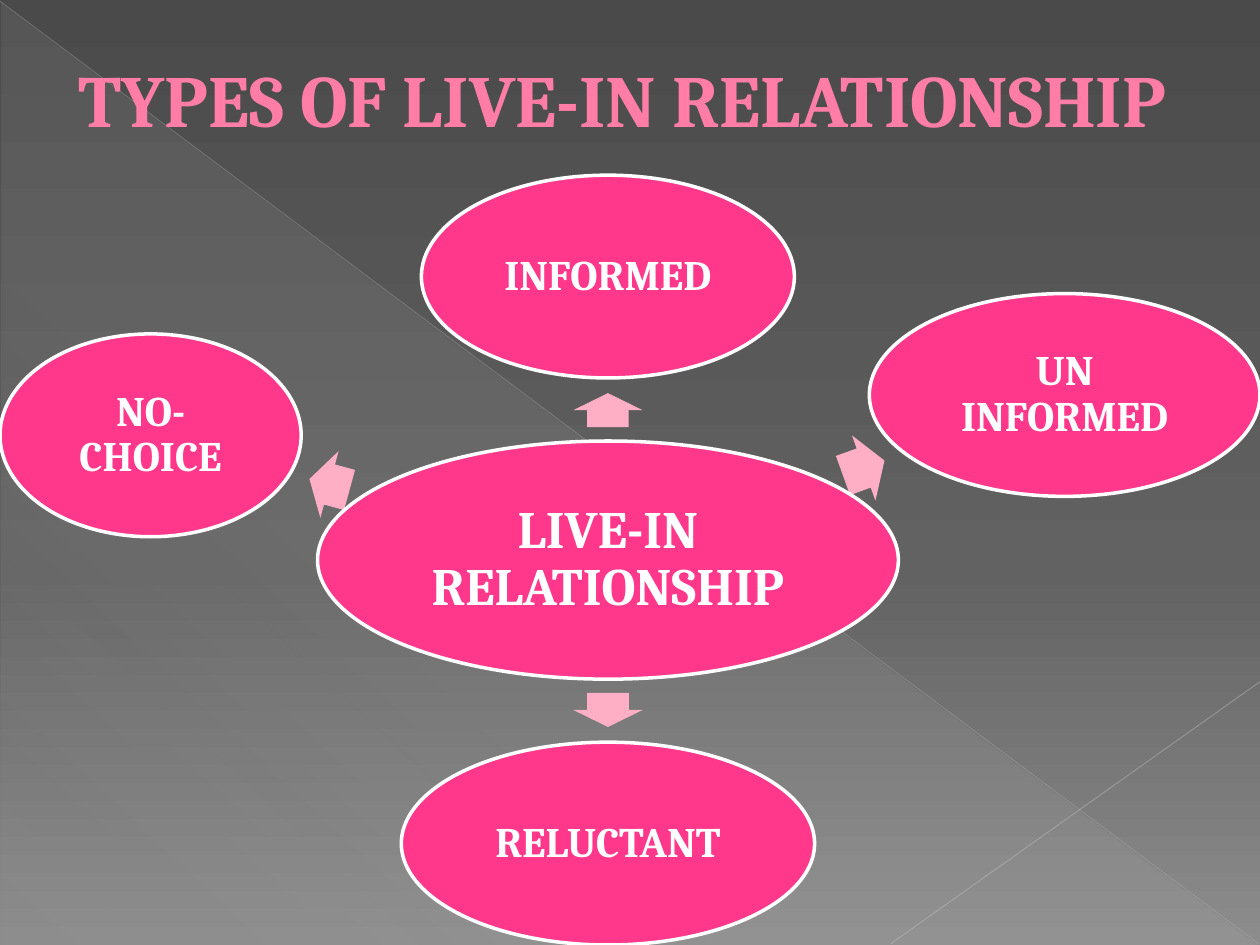
from lxml import etree
from pptx import Presentation
from pptx.dml.color import RGBColor
from pptx.enum.shapes import MSO_CONNECTOR as CONN, MSO_SHAPE as SHAPE
from pptx.enum.text import MSO_ANCHOR as ANCHOR, MSO_AUTO_SIZE as AUTO, PP_ALIGN as ALIGN
from pptx.oxml.ns import qn
from pptx.util import Inches, Pt

WHITE = RGBColor(0xFF, 0xFF, 0xFF)
PINK = RGBColor(0xFF, 0x38, 0x8C)
PALE_PINK = RGBColor(0xFF, 0xAF, 0xC5)
TITLE_PINK = RGBColor(0xFF, 0x7D, 0xA7)
OUTLINE = RGBColor(0xB1, 0x27, 0x61)
DARK = RGBColor(0x4A, 0x4A, 0x4A)
MID = RGBColor(0x62, 0x62, 0x62)
LIGHT = RGBColor(0x8C, 0x8C, 0x8C)
SHEEN = RGBColor(0xD2, 0xD2, 0xD2)
RULE_A = RGBColor(0xBF, 0xBF, 0xBF)
RULE_B = RGBColor(0xC6, 0xC6, 0xC6)
FONT = "Cambria"

prs = Presentation()
prs.slide_width, prs.slide_height = Inches(10), Inches(7.5)
COL, ROW = prs.slide_width / 100, prs.slide_height / 75
s = prs.slides.add_slide(prs.slide_layouts[5])


def set_gradient(fill, root, stops, angle):
    """Stops are (position %, colour, opacity %); the angle runs clockwise."""
    fill.gradient()
    grad = root.find(".//" + qn("a:gradFill"))
    for child in list(grad):
        grad.remove(child)
    gs_list = etree.SubElement(grad, qn("a:gsLst"))
    for pos, color, opacity in stops:
        gs = etree.SubElement(gs_list, qn("a:gs"), pos=str(pos * 1000))
        clr = etree.SubElement(gs, qn("a:srgbClr"), val=str(color))
        etree.SubElement(clr, qn("a:alpha"), val=str(opacity * 1000))
    etree.SubElement(grad, qn("a:lin"), ang=str(angle * 60000), scaled="0")


def add_centred(kind, cx, cy, w, h, color):
    """Add a filled shape by its centre and size in columns and rows."""
    sp = s.shapes.add_shape(kind, int((cx - w / 2) * COL), int((cy - h / 2) * ROW),
                            int(w * COL), int(h * ROW))
    sp.shadow.inherit = False
    sp.fill.solid()
    sp.fill.fore_color.rgb = color
    sp.line.fill.background()
    return sp


# Background with a diagonal sheen
set_gradient(s.background.fill, s._element,
             [(0, DARK, 100), (60, MID, 100), (100, LIGHT, 100)], 90)
sheen = add_centred(SHAPE.RIGHT_TRIANGLE, 50, 37.6, 99.8, 74.8, SHEEN)
set_gradient(sheen.fill, sheen._element,
             [(0, SHEEN, 10), (70, SHEEN, 8), (100, SHEEN, 1)], 133)

# Thin diagonal rules
for x1, y1, x2, y2, color, width, opacity in [
    (0, 0.1, 99.9, 74.9, RULE_A, 0.39, 35),
    (100, 54.1, 70.7, 74.9, RULE_B, 0.47, 45),
]:
    rule = s.shapes.add_connector(CONN.STRAIGHT, int(x1 * COL), int(y1 * ROW),
                                  int(x2 * COL), int(y2 * ROW))
    rule.line.color.rgb = color
    rule.line.width = Pt(width)
    clr = rule._element.spPr.find(".//" + qn("a:srgbClr"))
    etree.SubElement(clr, qn("a:alpha"), val=str(opacity * 1000))
    etree.SubElement(rule._element.spPr, qn("a:effectLst"))

# Title, in front of the sheen
title = s.shapes.title
s.shapes._spTree.append(title._element)
title.left, title.top = 0, 0
title.width, title.height = prs.slide_width, int(15.5 * ROW)
tf = title.text_frame
tf.auto_size = AUTO.NONE
tf.vertical_anchor = ANCHOR.MIDDLE
p = tf.paragraphs[0]
p.alignment = ALIGN.CENTER
r = p.add_run()
r.text = "TYPES OF LIVE-IN RELATIONSHIP "
r.font.size, r.font.name, r.font.bold = Pt(42), FONT, True
r.font.color.rgb = TITLE_PINK
ln = etree.Element(qn("a:ln"), w=str(Pt(0.5)))
ln_fill = etree.SubElement(ln, qn("a:solidFill"))
etree.SubElement(ln_fill, qn("a:srgbClr"), val=str(OUTLINE))
r.font._element.insert(0, ln)

# Arrows from the hub: centre, length, rotation
for cx, cy, length, rotation in [
    (48.25, 32.55, 2.7, 270),
    (68.55, 37.15, 3.5, 340.2),
    (48.25, 56.35, 2.7, 90),
    (26.15, 38.45, 3.3, 195.3),
]:
    arrow = add_centred(SHAPE.RIGHT_ARROW, cx, cy, length, 5.5, PALE_PINK)
    arrow.adjustments[0], arrow.adjustments[1] = 0.6, 0.5
    arrow.rotation = rotation

# Hub and the types around it: lines of text, centre, size, font size, inset
for lines, cx, cy, w, h, size, inset in [
    (["LIVE-IN RELATIONSHIP"], 48.25, 44.45, 46.1, 18.9, 30, 0.4),
    (["INFORMED"], 48.25, 21.95, 29.6, 16.1, 24, 0.3),
    (["UN", "INFORMED"], 84.5, 31.35, 31, 16.1, 24, 0.3),
    (["RELUCTANT"], 48.25, 66.95, 32.8, 16.1, 24, 0.3),
    (["NO-CHOICE"], 11.95, 34.55, 23.9, 16.1, 24, 0.3),
]:
    oval = add_centred(SHAPE.OVAL, cx, cy, w, h, PINK)
    oval.line.color.rgb = WHITE
    oval.line.width = Pt(2)
    tf = oval.text_frame
    tf.word_wrap = True
    tf.vertical_anchor = ANCHOR.MIDDLE
    tf.margin_left = tf.margin_right = int(inset * COL)
    tf.margin_top = tf.margin_bottom = int(inset * ROW)
    for i, line in enumerate(lines):
        p = tf.add_paragraph() if i else tf.paragraphs[0]
        p.alignment = ALIGN.CENTER
        p.line_spacing = 0.9
        r = p.add_run()
        r.text = line
        r.font.size, r.font.name, r.font.bold = Pt(size), FONT, True
        r.font.color.rgb = WHITE

prs.save("out.pptx")
